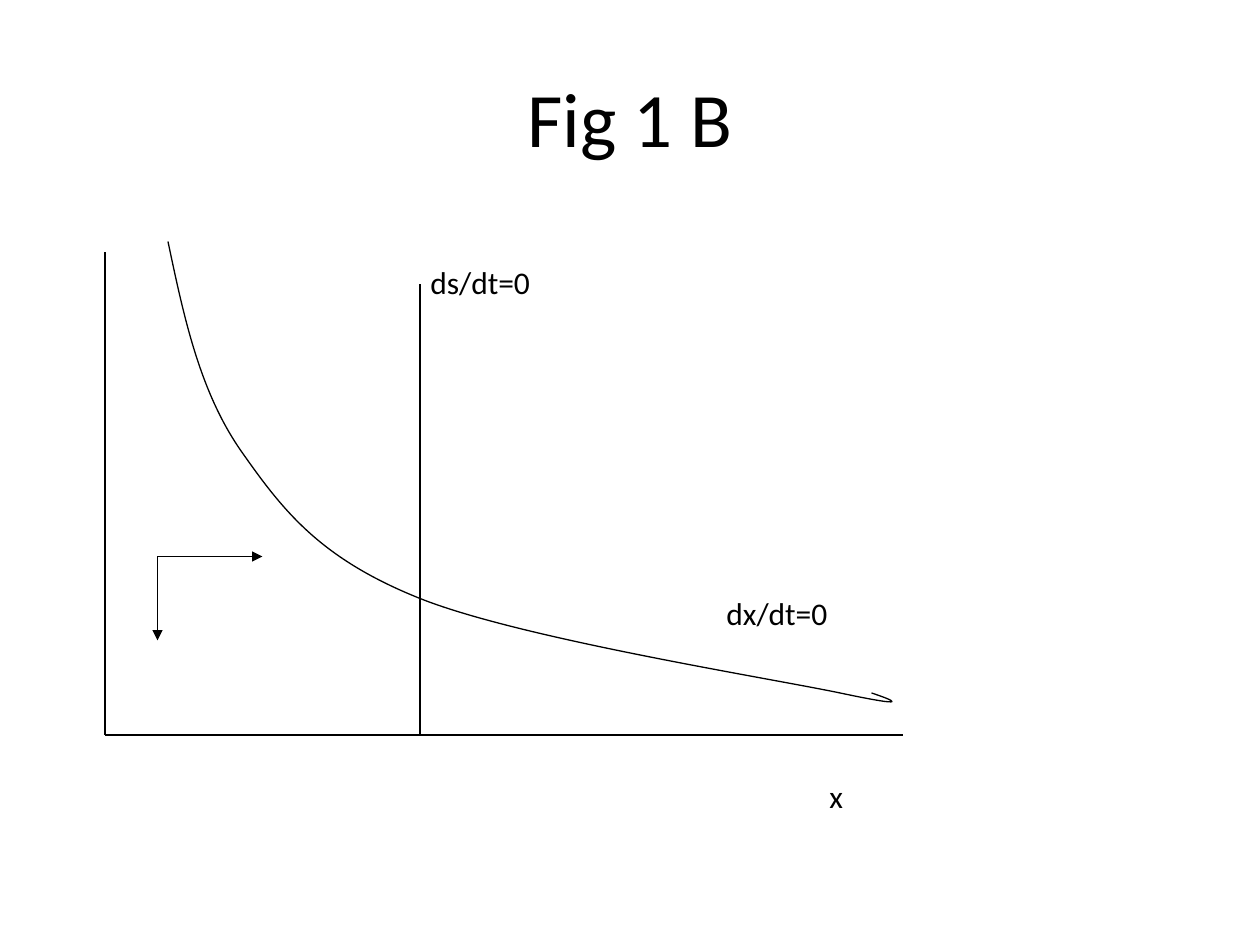
from typing import NamedTuple

from pptx import Presentation
from pptx import util as u
from pptx.dml.color import RGBColor
from pptx.enum import shapes, text
from pptx.oxml.ns import qn
from lxml import etree

PX = u.Inches(1) // 120
COLORS = {"ink": "000000", "paper": "FFFFFF"}
FONT = "Calibri"


class Segment(NamedTuple):
    x1: int
    y1: int
    x2: int
    y2: int
    arrow: bool = False


class Label(NamedTuple):
    words: str
    left: int
    top: int
    width: int
    height: int = 48


SEGMENTS = [
    Segment(100, 240, 100, 700),  # vertical axis
    Segment(100, 700, 860, 700),  # horizontal axis
    Segment(400, 700, 400, 270),  # ds/dt nullcline
    Segment(150, 530, 250, 530, arrow=True),
    Segment(150, 530, 150, 610, arrow=True),
]
LABELS = [
    Label("x", 778, 734, 40),
    Label("ds/dt=0", 398, 245, 124),
    Label("dx/dt=0", 680, 560, 124),
]
# Start point, then two control points and an end point for each cubic
NULLCLINE = [
    (160, 230),
    (175, 301), (190, 373), (230, 430),
    (270, 487), (305, 532), (400, 570),
    (495, 608), (728, 645), (800, 660),
    (871, 675), (851, 667), (830, 660),
]


def color(name: str) -> RGBColor:
    return RGBColor.from_string(COLORS[name])


def style_text(frame, size: int) -> None:
    for para in frame.paragraphs:
        for span in para.runs:
            span.font.name = FONT
            span.font.size = u.Pt(size)
            span.font.color.rgb = color("ink")


def style_line(line) -> None:
    line.color.rgb = color("ink")
    line.width = u.Pt(0.75)


def add_title(page, words: str) -> None:
    title = page.shapes.title
    title.left, title.top, title.width, title.height = (
        n * PX for n in (60, 36, 1080, 150))
    frame = title.text_frame
    frame.text = words
    frame.vertical_anchor = text.MSO_ANCHOR.MIDDLE
    frame.paragraphs[0].alignment = text.PP_ALIGN.CENTER
    style_text(frame, 44)


def add_segment(page, segment: Segment) -> None:
    connector = page.shapes.add_connector(
        shapes.MSO_CONNECTOR.STRAIGHT, *(n * PX for n in segment[:4]))
    style_line(connector.line)
    if segment.arrow:
        etree.SubElement(connector.line._get_or_add_ln(), qn("a:tailEnd"), type="triangle")
    etree.SubElement(connector._element.spPr, qn("a:effectLst"))


def add_label(page, label: Label) -> None:
    box = page.shapes.add_textbox(*(n * PX for n in label[1:]))
    frame = box.text_frame
    frame.text = label.words
    frame.word_wrap = False
    frame.auto_size = text.MSO_AUTO_SIZE.SHAPE_TO_FIT_TEXT
    style_text(frame, 18)


def add_curve(page, points: list[tuple[int, int]]) -> None:
    """Draw a freeform whose vertices, three by three, become cubic segments."""
    builder = page.shapes.build_freeform(*points[0], scale=PX)
    builder.add_line_segments(points[1:], close=False)
    curve = builder.convert_to_shape()
    curve.fill.background()
    curve.shadow.inherit = False
    style_line(curve.line)
    outline = next(curve._element.iter(qn("a:path")))
    steps = outline.findall(qn("a:lnTo"))
    for start in range(0, len(steps), 3):
        cubic = etree.SubElement(outline, qn("a:cubicBezTo"))
        for step in steps[start:start + 3]:
            cubic.append(step[0])
            outline.remove(step)


def main() -> None:
    deck = Presentation()
    deck.slide_width, deck.slide_height = 1200 * PX, 900 * PX
    page = deck.slides.add_slide(deck.slide_layouts.get_by_name("Title Only"))
    page.background.fill.solid()
    page.background.fill.fore_color.rgb = color("paper")
    add_title(page, "Fig 1 B")
    for segment in SEGMENTS:
        add_segment(page, segment)
    for label in LABELS:
        add_label(page, label)
    add_curve(page, NULLCLINE)
    deck.save("out.pptx")


if __name__ == "__main__":
    main()
